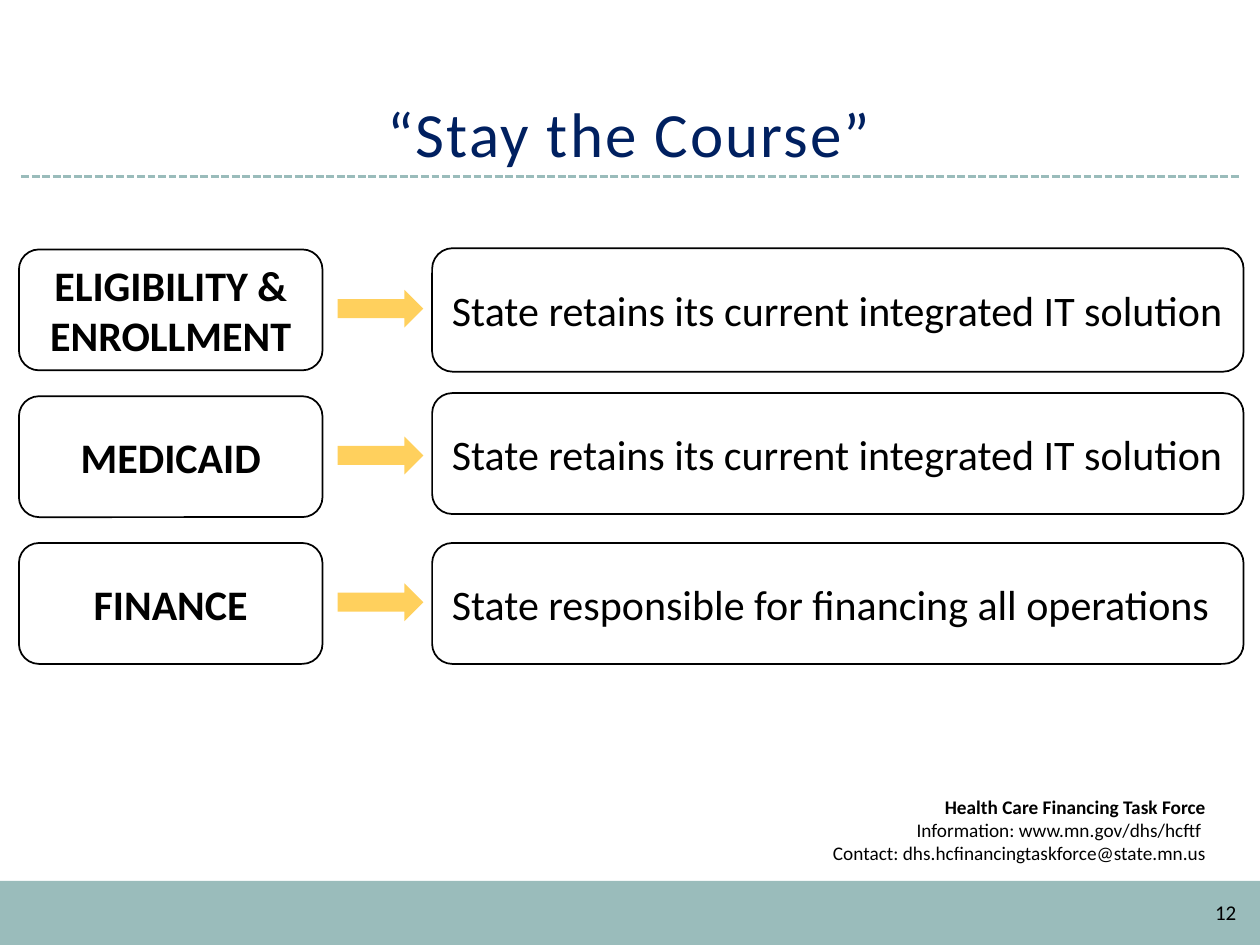
from lxml import etree
from pptx import Presentation
from pptx.dml.color import RGBColor
from pptx.enum.dml import MSO_LINE
from pptx.enum.shapes import MSO_CONNECTOR, MSO_SHAPE
from pptx.enum.text import MSO_ANCHOR, MSO_AUTO_SIZE, PP_ALIGN
from pptx.oxml.ns import qn
from pptx.util import Inches, Pt

RECT, ROUNDED, ARROW = MSO_SHAPE.RECTANGLE, MSO_SHAPE.ROUNDED_RECTANGLE, MSO_SHAPE.RIGHT_ARROW
LEFT, CENTER, RIGHT = PP_ALIGN.LEFT, PP_ALIGN.CENTER, PP_ALIGN.RIGHT
MIDDLE, BOTTOM = MSO_ANCHOR.MIDDLE, MSO_ANCHOR.BOTTOM
DASH = MSO_LINE.SQUARE_DOT
WHITE, BLACK, NAVY, TEAL, GOLD = "FFFFFF", "000000", "002060", "9ABCBB", "FFD05D"

prs = Presentation()
prs.slide_width, prs.slide_height = Inches(10), Inches(7.5)
slide = prs.slides.add_slide(prs.slide_layouts[5])


def add_block(kind, box, fill, outline=None):
    block = slide.shapes.add_shape(kind, *map(Inches, box))
    block.shadow.inherit = False
    block.fill.solid()
    block.fill.fore_color.rgb = RGBColor.from_string(fill)
    if outline:
        block.line.color.rgb = RGBColor.from_string(outline)
        block.line.width = Pt(1)
    else:
        block.line.fill.background()
    return block


def style(paragraph, size, align, color=BLACK, bold=False):
    paragraph.alignment = align
    paragraph.font.name = "Calibri"
    paragraph.font.size = Pt(size)
    paragraph.font.bold = bold
    paragraph.font.color.rgb = RGBColor.from_string(color)


# Footer band and dashed rule under the title
add_block(RECT, (0, 6.99, 10, 0.51), TEAL)
rule = slide.shapes.add_connector(
    MSO_CONNECTOR.STRAIGHT, Inches(0.17), Inches(1.4), Inches(9.83), Inches(1.4))
rule.line.color.rgb = RGBColor.from_string(TEAL)
rule.line.width = Pt(1.5)
rule.line.dash_style = DASH
etree.SubElement(rule._element.spPr, qn("a:effectLst"))

# Task force contact details
contact = add_block(RECT, (4.54, 6.26, 5.13, 0.67), WHITE).text_frame
contact.word_wrap = True
contact.vertical_anchor = MSO_ANCHOR.TOP
force = contact.paragraphs[0]
heading = force.add_run()
heading.text = "Health Care Financing Task Force"
heading.font.bold = True
force.add_line_break()
force.add_run().text = "Information: www.mn.gov/dhs/hcftf "
email = contact.add_paragraph()
email.text = "Contact: dhs.hcfinancingtaskforce@state.mn.us"
for paragraph in contact.paragraphs:
    style(paragraph, 11, RIGHT)

# Title
title = slide.shapes.title
title.left, title.top, title.width, title.height = map(Inches, (0.33, 0.25, 9.33, 1.15))
title.text_frame.text = "“Stay the Course”"
title.text_frame.auto_size = MSO_AUTO_SIZE.NONE
title.text_frame.vertical_anchor = BOTTOM
headline = title.text_frame.paragraphs[0]
headline.line_spacing = Pt(40)
style(headline, 36, CENTER, NAVY)
headline.runs[0].font._element.set("spc", "120")

# One row per area: label, arrow, approach with its top and height
ROW_TOP, ROW_PITCH = 1.98, 1.165
areas = [
    ("ELIGIBILITY & ENROLLMENT", "State retains its current integrated IT solution", 1.97, 0.98),
    ("MEDICAID", "State retains its current integrated IT solution", 3.12, 0.96),
    ("FINANCE", "State responsible for financing all operations", 4.31, 0.96),
]
for row, (area, approach, approach_top, approach_height) in enumerate(areas):
    top = ROW_TOP + row * ROW_PITCH
    add_block(ARROW, (2.68, top + 0.32, 0.68, 0.3), GOLD)
    for wording, box, align, bold in (
        (area, (0.15, top, 2.41, 0.96), CENTER, True),
        (approach, (3.43, approach_top, 6.44, approach_height), LEFT, False),
    ):
        frame = add_block(ROUNDED, box, WHITE, BLACK).text_frame
        frame.text = wording
        frame.word_wrap = True
        frame.vertical_anchor = MIDDLE
        frame.margin_left = frame.margin_right = Inches(0.11)
        frame.margin_top = frame.margin_bottom = Inches(0.06)
        style(frame.paragraphs[0], 24, align, bold=bold)

# Slide number
number = slide.shapes.add_textbox(*map(Inches, (9.33, 7.04, 0.58, 0.4))).text_frame
number.text = "12"
number.word_wrap = True
number.vertical_anchor = MIDDLE
style(number.paragraphs[0], 12, RIGHT)

prs.save("out.pptx")
